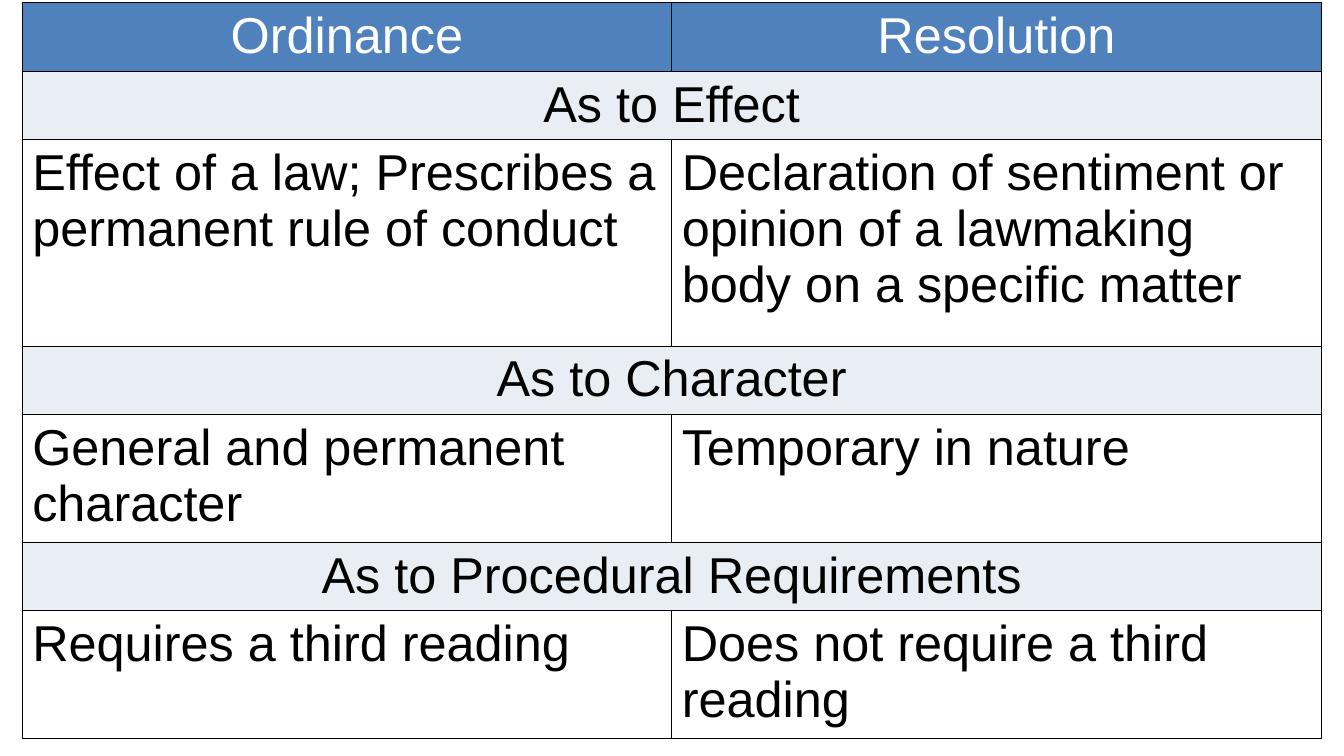
import pptx
import pptx.util
import pptx.dml.color
import pptx.enum.text
import pptx.oxml
import pptx.oxml.ns
from pptx.util import Cm

COLORS = {
    "header": "4F81BD",
    "section": "E9EDF4",
    "body": "FFFFFF",
    "header_text": "FFFFFF",
    "text": "000000",
    "border": "000000",
}
ROWS = [
    ("header", 2.59, ["Ordinance", "Resolution"]),
    ("section", 2.59, ["As to Effect"]),
    ("body", 7.8, [
        "Effect of a law; Prescribes a permanent rule of conduct",
        "Declaration of sentiment or opinion of a lawmaking body on a specific matter",
    ]),
    ("section", 2.59, ["As to Character"]),
    ("body", 4.83, ["General and permanent character", "Temporary in nature"]),
    ("section", 2.59, ["As to Procedural Requirements"]),
    ("body", 4.83, ["Requires a third reading", "Does not require a third reading"]),
]
LEFT, TOP, COL_WIDTH = 0.84, 0.1, 24.55


def rgb(name):
    return pptx.dml.color.RGBColor.from_string(COLORS[name])


def add_borders(cell):
    tcPr = cell._tc.get_or_add_tcPr()
    for i, side in enumerate(("lnL", "lnR", "lnT", "lnB")):
        ln = pptx.oxml.parse_xml(
            f'<a:{side} {pptx.oxml.ns.nsdecls("a")} w="12700"><a:solidFill>'
            f'<a:srgbClr val="{COLORS["border"]}"/></a:solidFill></a:{side}>'
        )
        tcPr.insert(i, ln)


def format_cell(cell, kind):
    cell.fill.solid()
    cell.fill.fore_color.rgb = rgb(kind)
    cell.margin_left = cell.margin_right = Cm(0.38)
    cell.margin_top = cell.margin_bottom = Cm(0.2)
    add_borders(cell)


def write_cell(cell, kind, text):
    p = cell.text_frame.paragraphs[0]
    p.text = text
    align = pptx.enum.text.PP_ALIGN
    p.alignment = align.LEFT if kind == "body" else align.CENTER
    p.font.name = "Arial"
    p.font.size = pptx.util.Pt(54)
    p.font.bold = False
    p.font.color.rgb = rgb("header_text" if kind == "header" else "text")


def main():
    prs = pptx.Presentation()
    prs.slide_width, prs.slide_height = Cm(50.8), Cm(28.58)
    s = prs.slides.add_slide(prs.slide_layouts[6])
    height = sum(h for _, h, _ in ROWS)
    table = s.shapes.add_table(
        len(ROWS), 2, Cm(LEFT), Cm(TOP), Cm(2 * COL_WIDTH), Cm(height)
    ).table
    table.horz_banding = False
    for col in table.columns:
        col.width = Cm(COL_WIDTH)
    for i, (kind, row_height, texts) in enumerate(ROWS):
        table.rows[i].height = Cm(row_height)
        for cell in table.rows[i].cells:
            format_cell(cell, kind)
        if kind == "section":
            table.cell(i, 0).merge(table.cell(i, 1))
        for j, text in enumerate(texts):
            write_cell(table.cell(i, j), kind, text)
    prs.save("out.pptx")


if __name__ == "__main__":
    main()
